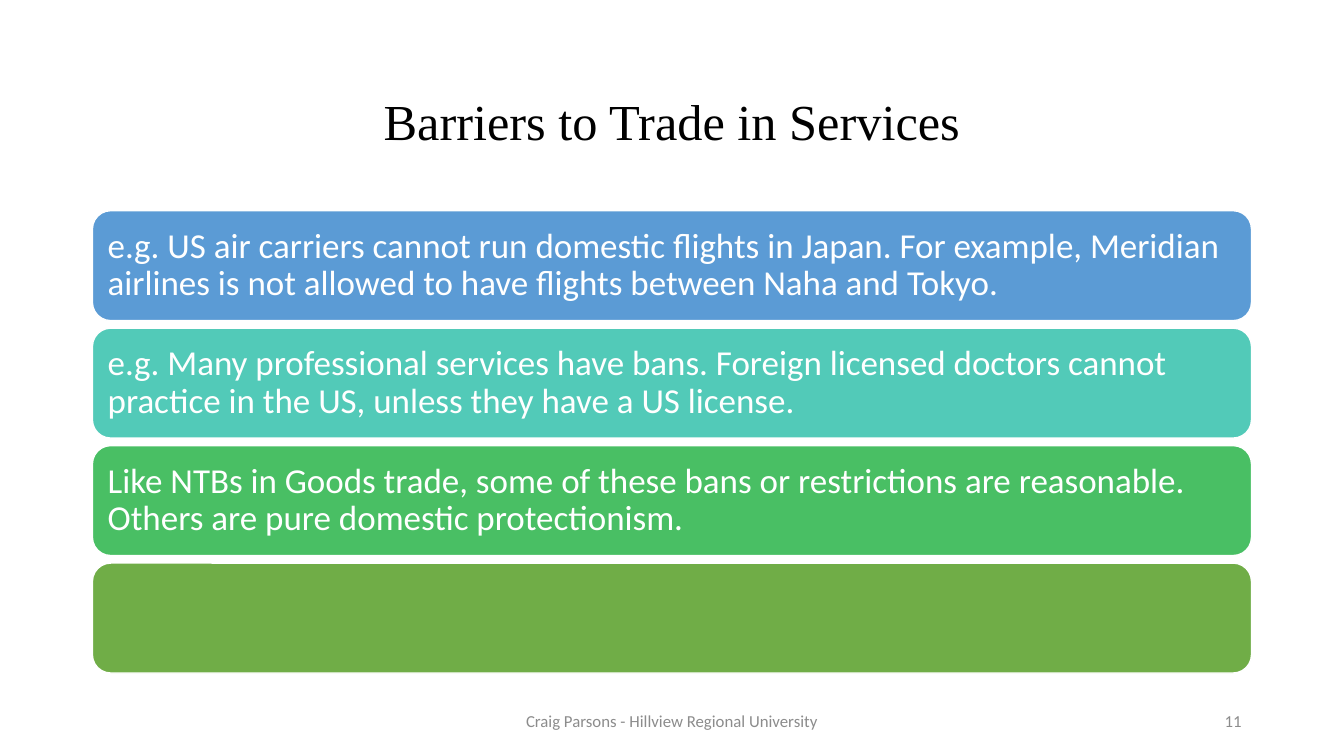
import pptx
import pptx.util
import pptx.dml.color
import pptx.enum.shapes
import pptx.enum.text
from pptx.util import Cm, Pt

COLORS = {
    "title": "000000",
    "footer": "8C8C8C",
    "white": "FFFFFF",
    "blue": "5B9BD5",
    "teal": "52CAB8",
    "green": "49BF64",
    "olive": "70AD47",
}
BARRIERS = [
    ("blue", "e.g. US air carriers cannot run domestic flights in Japan. For example, "
             "Meridian airlines is not allowed to have flights between Naha and Tokyo."),
    ("teal", "e.g. Many professional services have bans. Foreign licensed doctors cannot "
             "practice in the US, unless they have a US license."),
    ("green", "Like NTBs in Goods trade, some of these bans or restrictions are reasonable. "
              "Others are pure domestic protectionism."),
    ("olive", ""),
]
LEFT, WIDTH = 2.33, 29.21
ALIGN = pptx.enum.text.PP_ALIGN


def rgb(name):
    return pptx.dml.color.RGBColor.from_string(COLORS[name])


def write(sp, text, size, color, align, font="Calibri", spacing=1.0):
    """Fill a shape with one vertically centred paragraph."""
    tf = sp.text_frame
    tf.word_wrap = True
    tf.vertical_anchor = pptx.enum.text.MSO_ANCHOR.MIDDLE
    p = tf.paragraphs[0]
    p.alignment = align
    p.line_spacing = spacing
    r = p.add_run()
    r.text = text
    r.font.size = Pt(size)
    r.font.name = font
    r.font.color.rgb = rgb(color)


def add_title(s, x, y, w, h):
    sp = s.shapes.add_textbox(Cm(x), Cm(y), Cm(w), Cm(h))
    write(sp, "Barriers to Trade in Services", 36, "title", ALIGN.CENTER,
          "Times New Roman", 0.9)


def add_bars(s, x, y, w, h, gap=0.19):
    """Stack equal rounded bars down the box, one for each barrier."""
    bar_h = (h - gap * (len(BARRIERS) - 1)) / len(BARRIERS)
    for i, (color, text) in enumerate(BARRIERS):
        sp = s.shapes.add_shape(
            pptx.enum.shapes.MSO_SHAPE.ROUNDED_RECTANGLE,
            Cm(x), Cm(y + i * (bar_h + gap)), Cm(w), Cm(bar_h))
        sp.shadow.inherit = False
        sp.fill.solid()
        sp.fill.fore_color.rgb = rgb(color)
        sp.line.color.rgb = rgb("white")
        sp.line.width = Pt(1)
        if text:
            write(sp, text, 25, "white", ALIGN.LEFT, spacing=0.9)


def add_footer(s, x, y, w, h):
    """Place the credit in the middle of the box and the number at its right."""
    parts = [
        (x + (w - 11.43) / 2, 11.43, "Craig Parsons - Hillview Regional University", ALIGN.CENTER),
        (x + w - 7.62, 7.62, "11", ALIGN.RIGHT),
    ]
    for left, width, text, align in parts:
        sp = s.shapes.add_textbox(Cm(left), Cm(y), Cm(width), Cm(h))
        write(sp, text, 12, "footer", align)


def main():
    prs = pptx.Presentation()
    prs.slide_width, prs.slide_height = Cm(33.87), Cm(19.05)
    s = prs.slides.add_slide(prs.slide_layouts[6])
    add_title(s, LEFT, 1.55, WIDTH, 3.15)
    add_bars(s, LEFT, 5.31, WIDTH, 11.65)
    add_footer(s, LEFT, 17.65, WIDTH, 1.02)
    prs.save("out.pptx")


if __name__ == "__main__":
    main()
